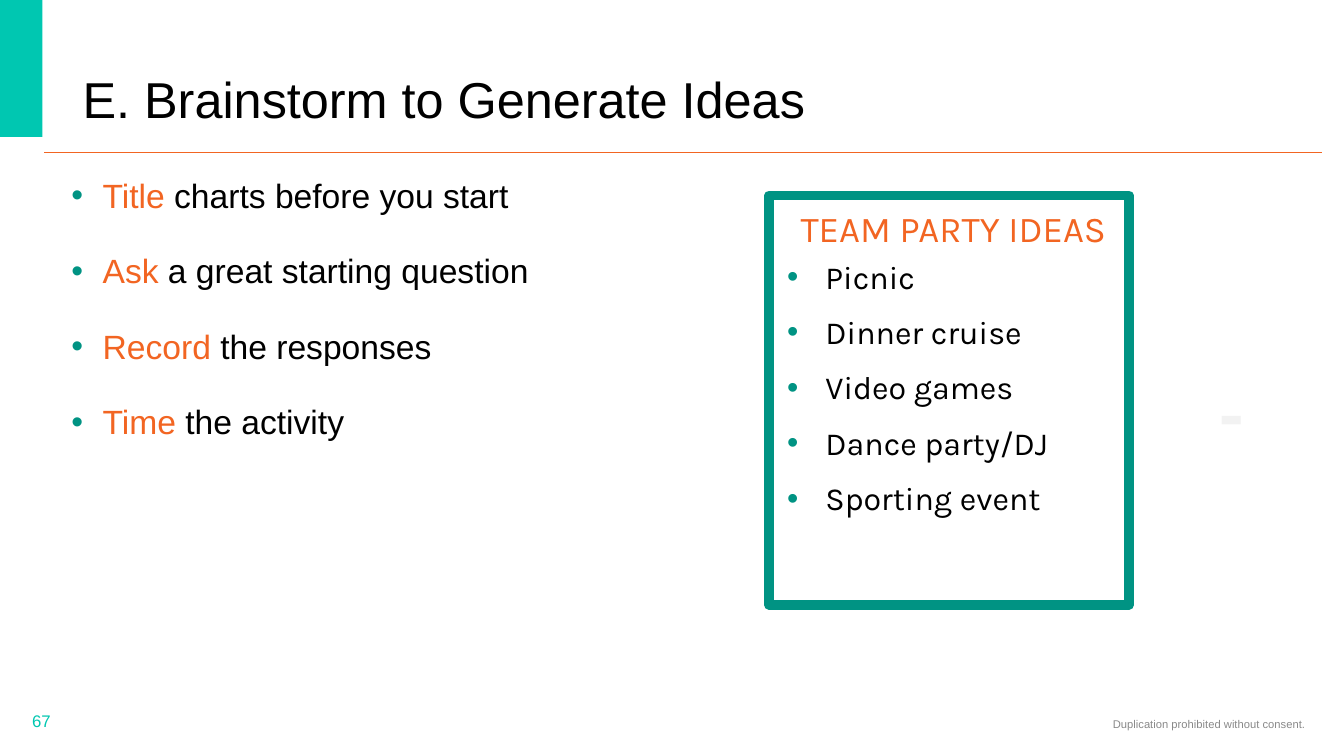
from dataclasses import dataclass
from lxml.etree import SubElement
from pptx import Presentation
from pptx.dml.color import RGBColor
from pptx.enum.shapes import MSO_CONNECTOR, MSO_SHAPE
from pptx.enum.text import MSO_ANCHOR, MSO_AUTO_SIZE, PP_ALIGN
from pptx.oxml.ns import qn
from pptx.util import Inches, Pt


@dataclass(frozen=True)
class Theme:
    teal: str = "00C7B1"
    green: str = "009383"
    orange: str = "F26522"
    black: str = "000000"
    white: str = "FFFFFF"
    gray: str = "898989"
    pale: str = "F2F2F2"
    font: str = "Arial"
    chart_font: str = "Karla"
    mark_font: str = "Montserrat"
    title: int = 36
    body: int = 24
    chart_title: int = 26
    chart_item: int = 23
    mark: int = 48
    number: int = 12
    footer: int = 8


THEME = Theme()
WIDTH, HEIGHT = Inches(13.33), Inches(7.5)
COLUMNS, ROWS = 160, 90


@dataclass(frozen=True)
class Box:
    column: float
    row: float
    columns: float
    rows: float

    def inner(self, column, row, columns, rows):
        return Box(self.column + column, self.row + row, columns, rows)

    def place(self):
        across, down = WIDTH / COLUMNS, HEIGHT / ROWS
        return (int(self.column * across), int(self.row * down),
                int(self.columns * across), int(self.rows * down))


def color(value):
    return RGBColor.from_string(value)


def add_span(para, text, font, size, ink, bold=False):
    span = para.add_run()
    span.text = text
    span.font.name = font
    span.font.size = Pt(size)
    span.font.bold = bold
    span.font.color.rgb = color(ink)


def add_bullet(para, indent):
    properties = para._p.get_or_add_pPr()
    properties.set("marL", str(Inches(indent)))
    properties.set("indent", str(-Inches(indent)))
    tint = SubElement(properties, qn("a:buClr"))
    SubElement(tint, qn("a:srgbClr"), val=THEME.green)
    SubElement(properties, qn("a:buFont"), typeface="Arial")
    SubElement(properties, qn("a:buChar"), char="•")


def next_para(frame, index):
    return frame.add_paragraph() if index else frame.paragraphs[0]


def add_rectangle(shapes, box, fill=None, line=None, weight=0.75):
    shape = shapes.add_shape(MSO_SHAPE.RECTANGLE, *box.place())
    shape.shadow.inherit = False
    if fill:
        shape.fill.solid()
        shape.fill.fore_color.rgb = color(fill)
    else:
        shape.fill.background()
    if line:
        shape.line.color.rgb = color(line)
        shape.line.width = Pt(weight)
    else:
        shape.line.fill.background()
    shape.text_frame.word_wrap = True
    shape.text_frame.vertical_anchor = MSO_ANCHOR.TOP
    return shape


def add_label(page, box, text, font, size, ink, align=PP_ALIGN.LEFT,
              anchor=MSO_ANCHOR.MIDDLE, bold=False):
    frame = page.shapes.add_textbox(*box.place()).text_frame
    frame.word_wrap = True
    frame.vertical_anchor = anchor
    para = frame.paragraphs[0]
    para.alignment = align
    add_span(para, text, font, size, ink, bold)


def add_header(page, box, text):
    add_rectangle(page.shapes, box.inner(0, 0, 5.04, 16.32), THEME.teal)
    left, top, width, _ = box.inner(5.28, 18.12, 152.16, 0).place()
    rule = page.shapes.add_connector(
        MSO_CONNECTOR.STRAIGHT, left, top, left + width, top)
    rule.line.color.rgb = color(THEME.orange)
    rule.line.width = Pt(0.5)
    SubElement(rule._element.spPr, qn("a:effectLst"))
    title = page.shapes.title
    title.left, title.top, title.width, title.height = box.inner(
        8.64, 6.84, 97.44, 9.12).place()
    frame = title.text_frame
    frame.word_wrap = True
    frame.auto_size = MSO_AUTO_SIZE.NONE
    frame.vertical_anchor = MSO_ANCHOR.BOTTOM
    para = frame.paragraphs[0]
    para.alignment = PP_ALIGN.LEFT
    para.line_spacing = 0.9
    add_span(para, text, THEME.font, THEME.title, THEME.black)


def add_steps(page, box, steps):
    frame = page.shapes.add_textbox(*box.place()).text_frame
    frame.word_wrap = True
    for index, (verb, rest) in enumerate(steps):
        para = next_para(frame, index)
        add_bullet(para, 0.31)
        para.line_spacing = 0.9
        para.space_before = Pt(16 if index else 0)
        para.space_after = Pt(12)
        add_span(para, verb + " ", THEME.font, THEME.body, THEME.orange)
        add_span(para, rest, THEME.font, THEME.body, THEME.black)


def add_flip_chart(page, box, heading, ideas):
    shapes = page.shapes.add_group_shape().shapes
    add_rectangle(shapes, box, THEME.white, THEME.green, 7)
    banner = add_rectangle(
        shapes, box.inner(2.16, 0.72, 39.6, 6.48), line=THEME.white)
    para = banner.text_frame.paragraphs[0]
    para.alignment = PP_ALIGN.CENTER
    add_span(para, heading, THEME.chart_font, THEME.chart_title, THEME.orange)
    listing = add_rectangle(
        shapes, box.inner(0.96, 6.72, 41.28, 32.52), line=THEME.white)
    for index, idea in enumerate(ideas):
        para = next_para(listing.text_frame, index)
        add_bullet(para, 0.38)
        para.alignment = PP_ALIGN.LEFT
        para.space_after = Pt(12)
        add_span(para, idea, THEME.chart_font, THEME.chart_item, THEME.black)


def add_footer(page, box, number, notice):
    add_label(page, box.inner(2.64, 0, 36, 4.8), number,
              THEME.font, THEME.number, THEME.teal)
    add_label(page, box.inner(89.04, 0.36, 67.56, 4.8), notice,
              THEME.font, THEME.footer, THEME.gray, PP_ALIGN.RIGHT)


def main():
    deck = Presentation()
    deck.slide_width, deck.slide_height = WIDTH, HEIGHT
    page = deck.slides.add_slide(deck.slide_layouts[5])
    page.background.fill.solid()
    page.background.fill.fore_color.rgb = color(THEME.white)
    add_header(page, Box(0, 0, COLUMNS, 20), "E. Brainstorm to Generate Ideas")
    add_steps(page, Box(7.32, 20.76, 150, 60.36), [
        ("Title", "charts before you start"),
        ("Ask", "a great starting question"),
        ("Record", "the responses"),
        ("Time", "the activity"),
    ])
    add_flip_chart(page, Box(91.56, 23.28, 42.84, 48.72), "TEAM PARTY IDEAS", [
        "Picnic", "Dinner cruise", "Video games", "Dance party/DJ",
        "Sporting event",
    ])
    add_label(page, Box(143.88, 43.68, 8.76, 10.92), "-", THEME.mark_font,
              THEME.mark, THEME.pale, anchor=MSO_ANCHOR.TOP, bold=True)
    add_footer(page, Box(0, 83.4, COLUMNS, 6.6), "67",
               "Duplication prohibited without consent.")
    deck.save("out.pptx")


if __name__ == "__main__":
    main()
